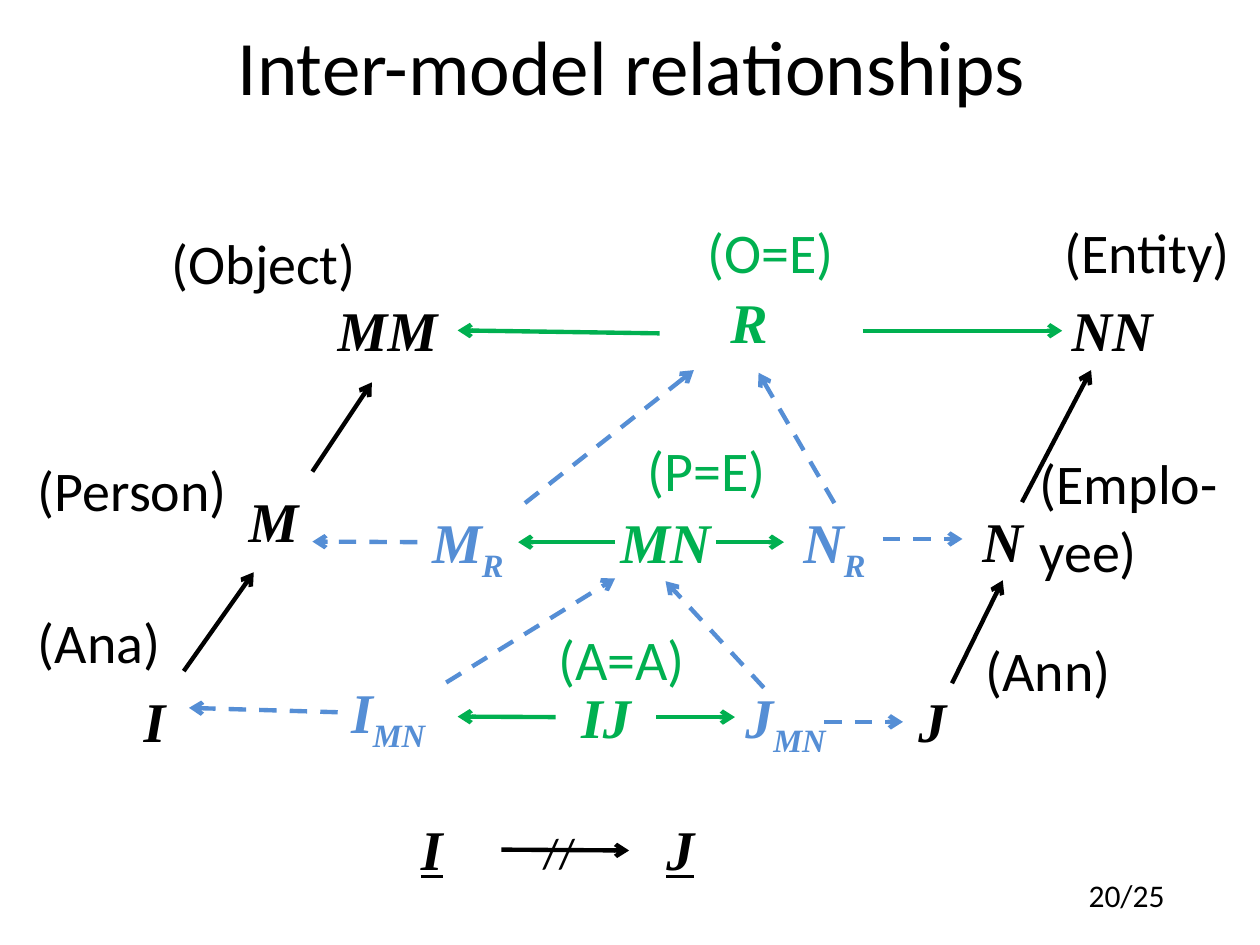
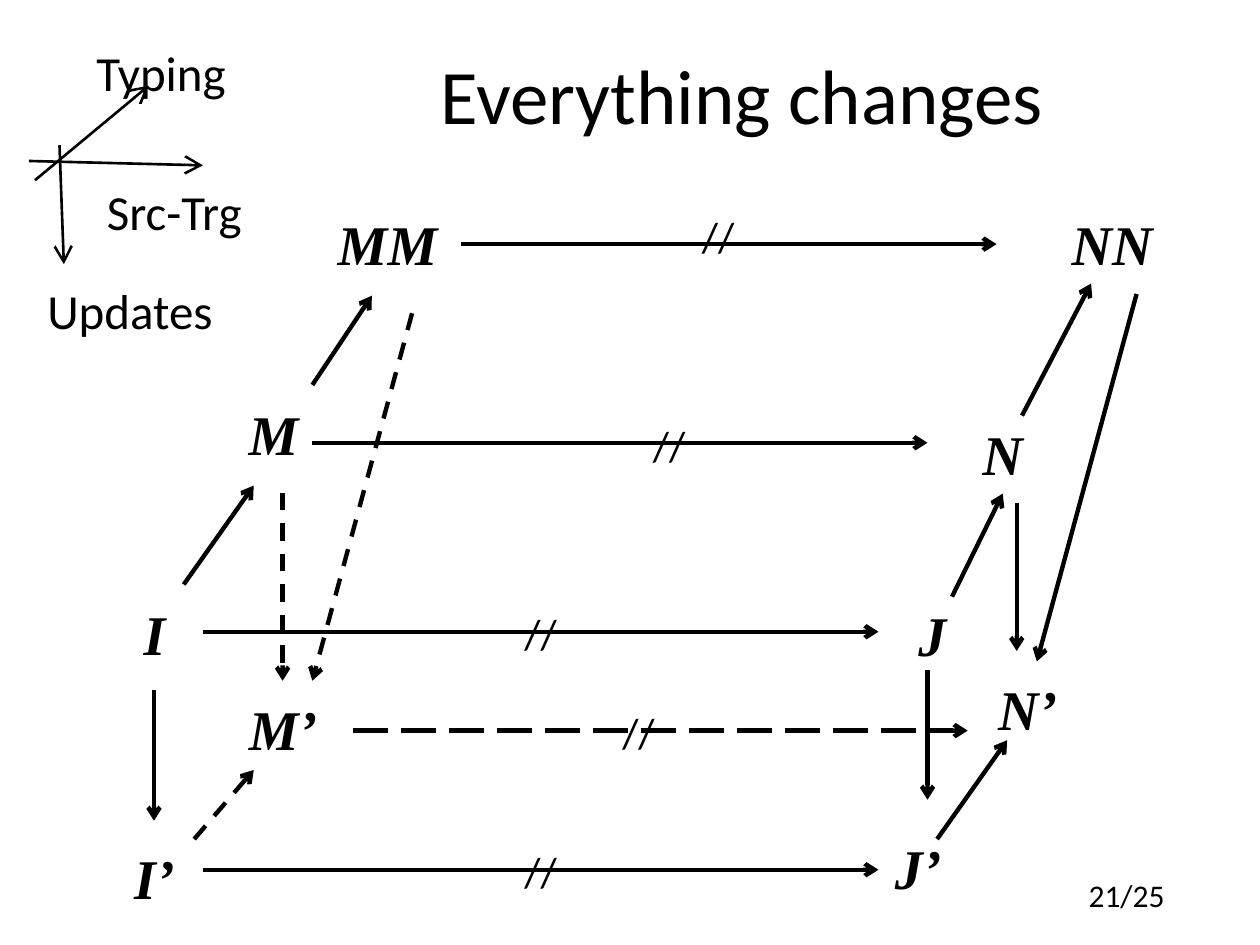
from lxml.etree import SubElement
from pptx import Presentation
from pptx.dml.color import RGBColor
from pptx.enum.dml import MSO_LINE
from pptx.enum.shapes import MSO_CONNECTOR
from pptx.enum.text import MSO_ANCHOR, PP_ALIGN
from pptx.oxml.ns import qn
from pptx.util import Pt

BLACK, BLUE, GREEN = "000000", "558ED5", "00B050"
DASH, LONG = MSO_LINE.DASH, MSO_LINE.LONG_DASH
TOP, LEFT, BASE, RIGHT = range(4)
NODE_H = 44.6


def text(slide, words, x, y, w, h, size=32, hue=BLACK, node=False, sub=""):
    """Add a label, or a centred bold italic node with an optional subscript."""
    box = slide.shapes.add_textbox(Pt(x), Pt(y), Pt(w), Pt(h))
    frame = box.text_frame
    frame.word_wrap = True
    para = frame.paragraphs[0]
    para.add_run().text = words
    font = para.font
    font.size = Pt(size)
    font.name = "Calibri"
    font.color.rgb = RGBColor.from_string(hue)
    if node:
        frame.margin_left = frame.margin_right = Pt(2.5)
        frame.margin_top = frame.margin_bottom = Pt(2.5)
        para.alignment = PP_ALIGN.CENTER
        font.name = "Times New Roman"
        font.bold = font.italic = True
    if sub:
        run = para.add_run()
        run.text = sub
        run.font._element.set("baseline", "-25000")
    return box


def arrow(slide, x1, y1, x2, y2, hue=BLACK, dash=None, width=2.5, tip="med",
          start=None, end=None):
    """Draw an arrow; start and end are (shape, side) pairs to join."""
    link = slide.shapes.add_connector(
        MSO_CONNECTOR.STRAIGHT, Pt(x1), Pt(y1), Pt(x2), Pt(y2))
    link.line.color.rgb = RGBColor.from_string(hue)
    link.line.width = Pt(width)
    if dash:
        link.line.dash_style = dash
    SubElement(link.line._get_or_add_ln(), qn("a:tailEnd"), type="arrow", w=tip, len=tip)
    SubElement(link._element.spPr, qn("a:effectLst"))
    if start:
        link.begin_connect(*start)
    if end:
        link.end_connect(*end)


deck = Presentation()
deck.slide_width, deck.slide_height = Pt(720), Pt(540)

# Title, its box, page number, and how far the model frame is moved down
pages = [
    ("Inter-model relationships", (37, -8, 648, 90), "20/25", 49.5),
    ("Everything changes ", (173, 15, 512, 77), "21/25", 0),
]
# Source models climb on the left, target models on the right
models = [
    ("I", 59.5, 340, 57.6), ("M", 127.5, 226, 57.6), ("MM", 181.5, 117, 80),
    ("J", 504, 340.5, 57.6), ("N", 533, 237.5, 80), ("NN", 595.5, 117, 80),
]
slides, nodes = [], []
for title, place, number, drop in pages:
    slide = deck.slides.add_slide(deck.slide_layouts[6])
    head = text(slide, title, *place, size=44)
    head.text_frame.vertical_anchor = MSO_ANCHOR.MIDDLE
    head.text_frame.paragraphs[0].alignment = PP_ALIGN.CENTER
    foot = text(slide, number, 615, 497, 61, 29, size=18)
    foot.text_frame.word_wrap = False

    node = {}
    for name, x, y, w in models:
        node[name] = text(slide, name, x, y + drop, w, NODE_H, node=True)
    for x1, y1, x2, y2, end in [
        (105, 334, 145, 277.5, None),
        (178.5, 220, 212.5, 169, None),
        (544, 341, 573, 282, (node["N"], BASE)),
        (584, 237.5, 623.5, 162, None),
    ]:
        arrow(slide, x1, y1 + drop, x2, y2 + drop, end=end)
    slides.append(slide)
    nodes.append(node)

# Inter-model relationships
slide, node = slides[0], nodes[0]
for words, sub, x, y, w, hue in [
    ("I", "MN", 193, 384.5, 57.6, BLUE),
    ("J", "MN", 420, 387.5, 57.6, BLUE),
    ("M", "R", 238.5, 287.5, 57.6, BLUE),
    ("N", "R", 448, 287.5, 57.6, BLUE),
    ("R", "", 382.5, 162, 91, GREEN),
    ("MN", "", 351.5, 287.5, 57.6, GREEN),
    ("IJ", "", 317.5, 387.5, 57.6, GREEN),
]:
    node[words + sub] = text(slide, words, x, y, w, NODE_H, hue=hue, node=True, sub=sub)

for words, x, y, w, h, hue in [
    ("(Object)", 91, 127, 130, 46, BLACK),
    ("(Entity)", 601, 121, 113, 46, BLACK),
    ("(Person)", 14.5, 257, 133, 46, BLACK),
    ("(Emplo-yee)", 587, 253, 119, 85, BLACK),
    ("(Ana)", 14.5, 343.5, 88, 46, BLACK),
    ("(Ann)", 556, 359.5, 96.5, 46, BLACK),
    ("(O=E)", 397, 121, 102, 46, GREEN),
    ("(P=E)", 363, 245.5, 91, 46, GREEN),
    ("(A=A)", 312, 353.5, 96.5, 46, GREEN),
]:
    text(slide, words, x, y, w, h, hue=hue)

for x1, y1, x2, y2, start, end in [
    (255, 390, 351.5, 330.5, None, None),
    (193, 407, 108, 404.5, None, None),
    (471, 412.5, 516, 412.5, None, None),
    (436.5, 393, 380, 332, None, (node["MN"], BASE)),
    (238.5, 309.5, 178.5, 309.5, (node["MR"], LEFT), None),
    (300, 287.5, 396.5, 211.5, None, None),
    (476.5, 287.5, 433.5, 213, (node["NR"], TOP), None),
    (504.5, 308, 550, 308, None, None),
]:
    arrow(slide, x1, y1, x2, y2, BLUE, DASH, start=start, end=end)

for x1, y1, x2, y2, start, end in [
    (377, 190.5, 261, 189.5, None, (node["MM"], RIGHT)),
    (493, 189, 607, 189, None, None),
    (409, 309.5, 448, 309.5, (node["MN"], RIGHT), (node["NR"], LEFT)),
    (351.5, 309.5, 296, 309.5, (node["MN"], LEFT), (node["MR"], RIGHT)),
    (375, 409.5, 420, 409.5, (node["IJ"], RIGHT), (node["JMN"], LEFT)),
    (317.5, 409.5, 261.5, 409.5, (node["IJ"], LEFT), None),
]:
    arrow(slide, x1, y1, x2, y2, GREEN, start=start, end=end)

for name, x in [("I", 218), ("J", 360)]:
    key = text(slide, name, x, 463, 57.6, NODE_H, node=True)
    key.text_frame.paragraphs[0].font.underline = True
arrow(slide, 286.5, 485.5, 359.5, 486)
text(slide, "//", 303, 468.5, 34, 36, size=24)

# Everything changes
slide = slides[1]
for name, x, y in [("I’", 59.5, 479.5), ("M’", 133, 394.5),
                   ("J’", 496, 474), ("N’", 558.5, 383)]:
    text(slide, name, x, y, 57.6, NODE_H, node=True)

for axis, x, y, w, line in [
    ("Typing", 48, 21, 102, (20, 103, 85, 49)),
    ("Src-Trg", 54, 100, 119, (16.5, 92, 116, 94.5)),
    ("Updates", 20, 157, 125, (34, 83, 36.5, 151)),
]:
    text(slide, axis, x, y, w, 41, size=28)
    arrow(slide, *line, width=1.5, tip="lg")

for x1, x2, y, left, top, dash in [
    (263.5, 569.5, 139.5, 394, 116.5, None),
    (178.5, 530, 253, 366, 236, None),
    (116, 502, 361, 292.5, 343.5, None),
    (201.5, 553, 417.5, 348.5, 400, LONG),
    (116, 502, 497, 292.5, 479.5, None),
]:
    arrow(slide, x1, y, x2, y, dash=dash)
    text(slide, "//", left, top, 34, 36, size=24)

for x1, y1, x2, y2, dash in [
    (161.5, 281.5, 161.5, 389, DASH),
    (235.5, 179, 178.5, 389, DASH),
    (111, 479.5, 145, 440, DASH),
    (88, 394.5, 88, 469, None),
    (530, 383, 530, 457, None),
    (581, 287.5, 581, 372, None),
    (649.5, 168, 592.5, 378, None),
    (535.5, 479.5, 575.5, 423, None),
]:
    arrow(slide, x1, y1, x2, y2, dash=dash)

deck.save("out.pptx")
